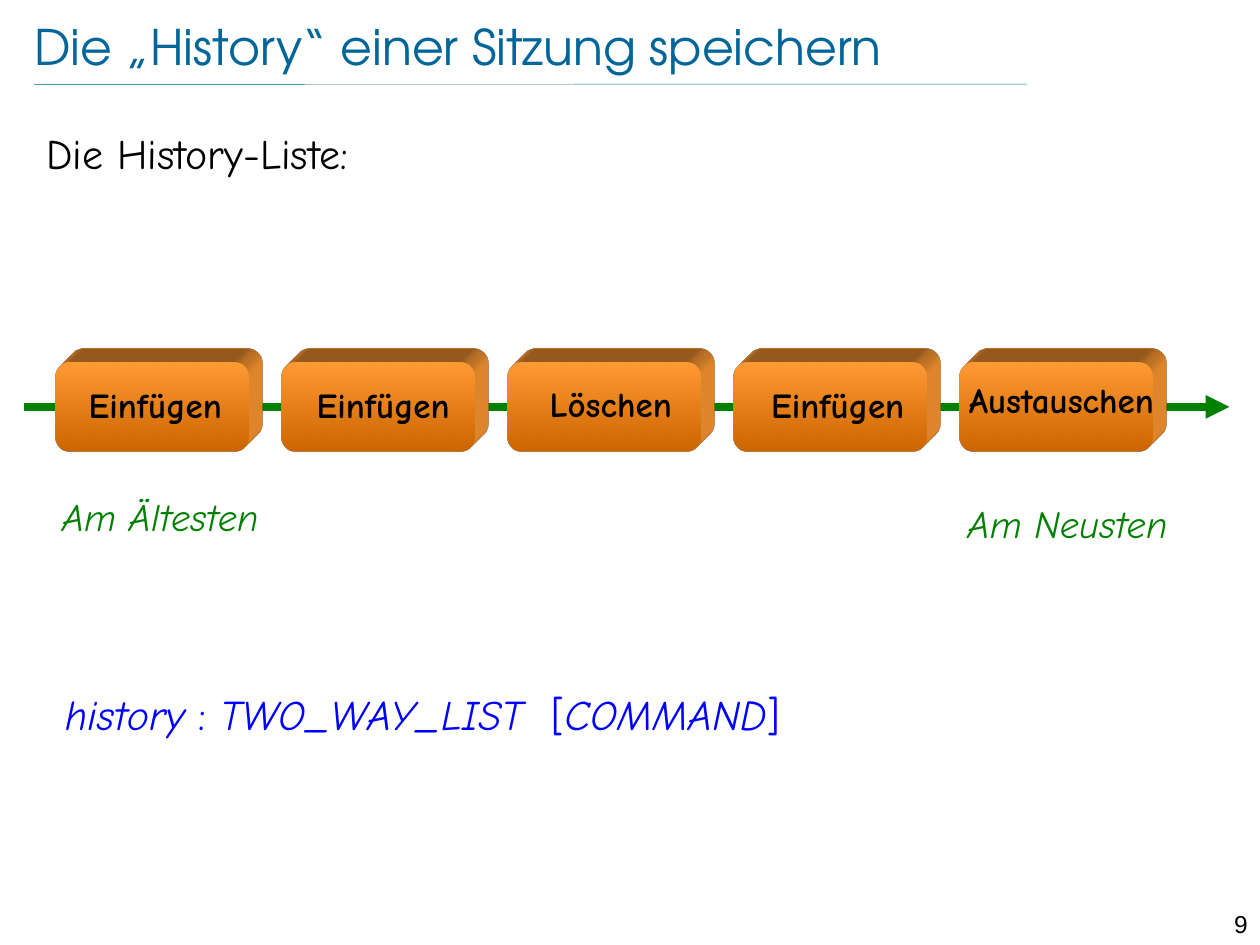
"""Build the slide showing the history list of a session."""
from lxml.etree import SubElement
from pptx import Presentation
from pptx.dml.color import RGBColor
from pptx.enum.shapes import MSO_CONNECTOR, MSO_SHAPE
from pptx.enum.text import MSO_ANCHOR, PP_ALIGN
from pptx.oxml.ns import qn
from pptx.util import Pt

COLORS = {"title": "006699", "text": "000000", "code": "0000FF", "green": "008000",
          "light": "FF9933", "dark": "CC6600"}


def add_text(box, text, size, color, font="Comic Neue", align=PP_ALIGN.LEFT,
             bold=False, italic=False, rounded=False):
    box = [Pt(v) for v in box]
    if rounded:
        sp = s.shapes.add_shape(MSO_SHAPE.ROUNDED_RECTANGLE, *box)
        sp.shadow.inherit = False
        sp.fill.background()
        sp.line.fill.background()
    else:
        sp = s.shapes.add_textbox(*box)
    tf = sp.text_frame
    tf.word_wrap, tf.vertical_anchor = True, MSO_ANCHOR.TOP
    p = tf.paragraphs[0]
    p.text, p.alignment = text, align
    p.font.name, p.font.size = font, Pt(size)
    p.font.bold, p.font.italic = bold, italic
    p.font.color.rgb = RGBColor.from_string(COLORS[color])
    return tf


def extrude(sp, depth):
    scene = SubElement(sp._element.spPr, qn("a:scene3d"))
    SubElement(scene, qn("a:camera"), prst="legacyObliqueTopRight")
    SubElement(scene, qn("a:lightRig"), rig="legacyFlat3", dir="b")
    solid = SubElement(sp._element.spPr, qn("a:sp3d"), extrusionH=str(Pt(depth)),
                       prstMaterial="legacyMatte")
    color = SubElement(solid, qn("a:extrusionClr"))
    SubElement(color, qn("a:srgbClr"), val=COLORS["light"])


prs = Presentation()
prs.slide_width, prs.slide_height = Pt(720), Pt(540)
s = prs.slides.add_slide(prs.slide_layouts[5])

title = s.shapes.title
title.left, title.top, title.width, title.height = Pt(19.5), Pt(9), Pt(625.5), Pt(34.5)
tf = title.text_frame
tf.margin_left = tf.margin_top = tf.margin_right = tf.margin_bottom = 0
tf.vertical_anchor = MSO_ANCHOR.MIDDLE
p = tf.paragraphs[0]
p.text, p.alignment = "Die „History“ einer Sitzung speichern", PP_ALIGN.LEFT
p.font.name, p.font.size = "TeX Gyre Adventor", Pt(28)
p.font.color.rgb = RGBColor.from_string(COLORS["title"])

add_text((19.5, 69.5, 677, 444), "Die History-Liste:", 24, "text")

for x1, y1, x2, y2, color, width in [(19.5, 48.2, 587, 48.1, "title", 0.25),
                                     (13.75, 232.5, 702.5, 232.5, "green", 4.5)]:
    line = s.shapes.add_connector(MSO_CONNECTOR.STRAIGHT, Pt(x1), Pt(y1), Pt(x2), Pt(y2))
    line.line.color.rgb = RGBColor.from_string(COLORS[color])
    line.line.width = Pt(width)
    if color == "green":
        SubElement(line.line._get_or_add_ln(), qn("a:tailEnd"), type="triangle")
    SubElement(line._element.spPr, qn("a:effectLst"))

for i in range(5):
    sp = s.shapes.add_shape(MSO_SHAPE.ROUNDED_RECTANGLE, Pt(31.5 + i * 129.25), Pt(206.75),
                            Pt(110.5), Pt(51.5))
    sp.adjustments[0] = 0.167
    sp.shadow.inherit = False
    sp.line.fill.background()
    sp.fill.gradient()
    sp.fill.gradient_angle = 270
    for stop, color, pos in zip(sp.fill.gradient_stops, ("light", "dark"), (0, 1)):
        stop.color.rgb = RGBColor.from_string(COLORS[color])
        stop.position = pos
    extrude(sp, 22)

for text, x, y, width, height in [
        ("Löschen", 299, 215, 100, 32), ("Austauschen", 538, 212.75, 137, 32),
        ("Einfügen", 31.5, 213.75, 114.5, 34.5), ("Einfügen", 162.75, 213.75, 112.5, 34.5),
        ("Einfügen", 421.75, 213.75, 114, 34.5)]:
    add_text((x, y, width, height), text, 20, "text", align=PP_ALIGN.CENTER,
             bold=True, rounded=text == "Einfügen")

for box, text in [((8, 278, 167, 34), "Am Ältesten"), ((532.5, 282, 155, 34), "Am Neusten")]:
    add_text(box, text, 22, "green", align=PP_ALIGN.CENTER, italic=True)

tf = add_text((30, 390, 660, 36), "", 24, "code")
p = tf.paragraphs[0]
tabs = SubElement(p._p.get_or_add_pPr(), qn("a:tabLst"))
SubElement(tabs, qn("a:tab"), pos=str(Pt(278)), algn="l")
p._p.pPr.insert(0, tabs)
for text, italic in [("history ", True), (": ", False), ("TWO_WAY_LIST\t", True),
                     ("[", False), ("COMMAND", True), ("]", False)]:
    r = p.add_run()
    r.text, r.font.italic = text, italic

add_text((680.5, 515.75, 39.5, 17.5), "9", 14, "text", "Arial", PP_ALIGN.RIGHT)

prs.save("out.pptx")
